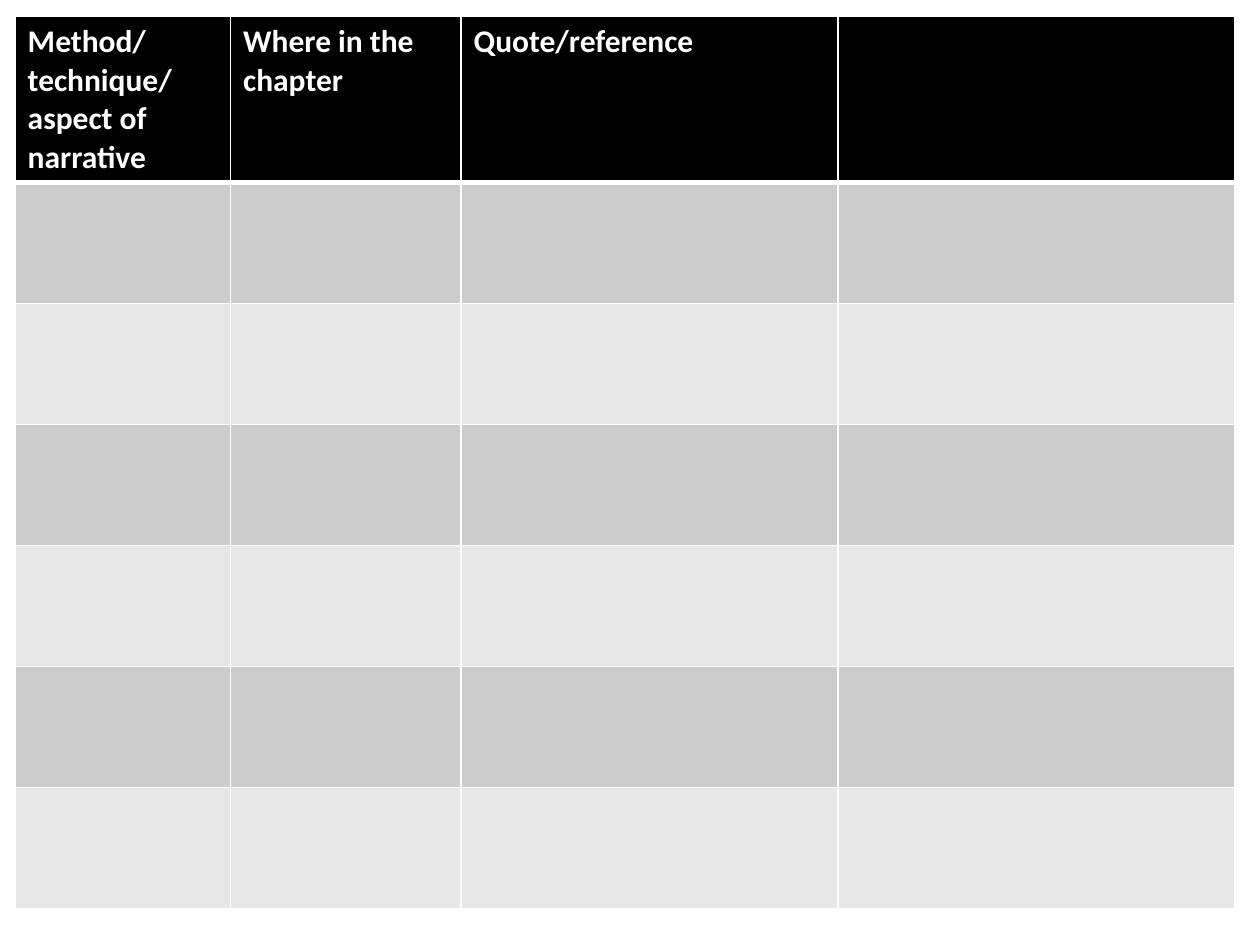
from lxml import etree
from pptx import Presentation
from pptx.dml.color import RGBColor
from pptx.oxml.ns import qn
from pptx.util import Inches, Pt

WHITE = RGBColor(0xFF, 0xFF, 0xFF)
BLACK = RGBColor(0x00, 0x00, 0x00)
MID_GREY = RGBColor(0xCC, 0xCC, 0xCC)
PALE_GREY = RGBColor(0xE7, 0xE7, 0xE7)

HEADINGS = [
    "Method/technique/aspect of narrative",
    "Where in the chapter",
    "Quote/reference",
    "",
]
COLUMN_WIDTHS = [1.71, 1.83, 2.99, 3.15]
ROW_HEIGHTS = [0.71] + [0.96] * 6
HEADING_FORMAT = {"name": "Calibri", "size": Pt(18), "bold": True}


def set_borders(cell, widths):
    """Draw white cell borders with the given width for each side."""
    properties = cell._tc.get_or_add_tcPr()
    for side, width in widths.items():
        border = etree.SubElement(properties, qn(f"a:ln{side}"), w=str(Pt(width)))
        fill = etree.SubElement(border, qn("a:solidFill"))
        etree.SubElement(fill, qn("a:srgbClr"), val=str(WHITE))


def write_heading(cell, heading):
    """Write a column heading in bold white."""
    run = cell.text_frame.paragraphs[0].add_run()
    run.text = heading
    for attribute, value in HEADING_FORMAT.items():
        setattr(run.font, attribute, value)
    run.font.color.rgb = WHITE


def add_narrative_grid(slide, left, top, width, height):
    """Place the note-taking grid in the given box."""
    grid = slide.shapes.add_table(
        len(ROW_HEIGHTS), len(COLUMN_WIDTHS), left, top, width, height
    ).table
    for column, column_width in zip(grid.columns, COLUMN_WIDTHS):
        column.width = round(width * column_width / sum(COLUMN_WIDTHS))
    for index, (row, row_height) in enumerate(zip(grid.rows, ROW_HEIGHTS)):
        row.height = round(height * row_height / sum(ROW_HEIGHTS))
        band = BLACK if index == 0 else MID_GREY if index % 2 else PALE_GREY
        borders = {
            "L": 1,
            "R": 1,
            "T": 3 if index == 1 else 1,
            "B": 3 if index == 0 else 1,
        }
        for cell in row.cells:
            set_borders(cell, borders)
            cell.fill.solid()
            cell.fill.fore_color.rgb = band
    for cell, heading in zip(grid.rows[0].cells, HEADINGS):
        if heading:
            write_heading(cell, heading)


def main():
    """Build and save the slide."""
    presentation = Presentation()
    presentation.slide_width = Inches(10)
    presentation.slide_height = Inches(7.5)
    slide = presentation.slides.add_slide(presentation.slide_layouts[6])
    add_narrative_grid(slide, Inches(0.12), Inches(0.13), Inches(9.68), Inches(6.47))
    presentation.save("out.pptx")


if __name__ == "__main__":
    main()
